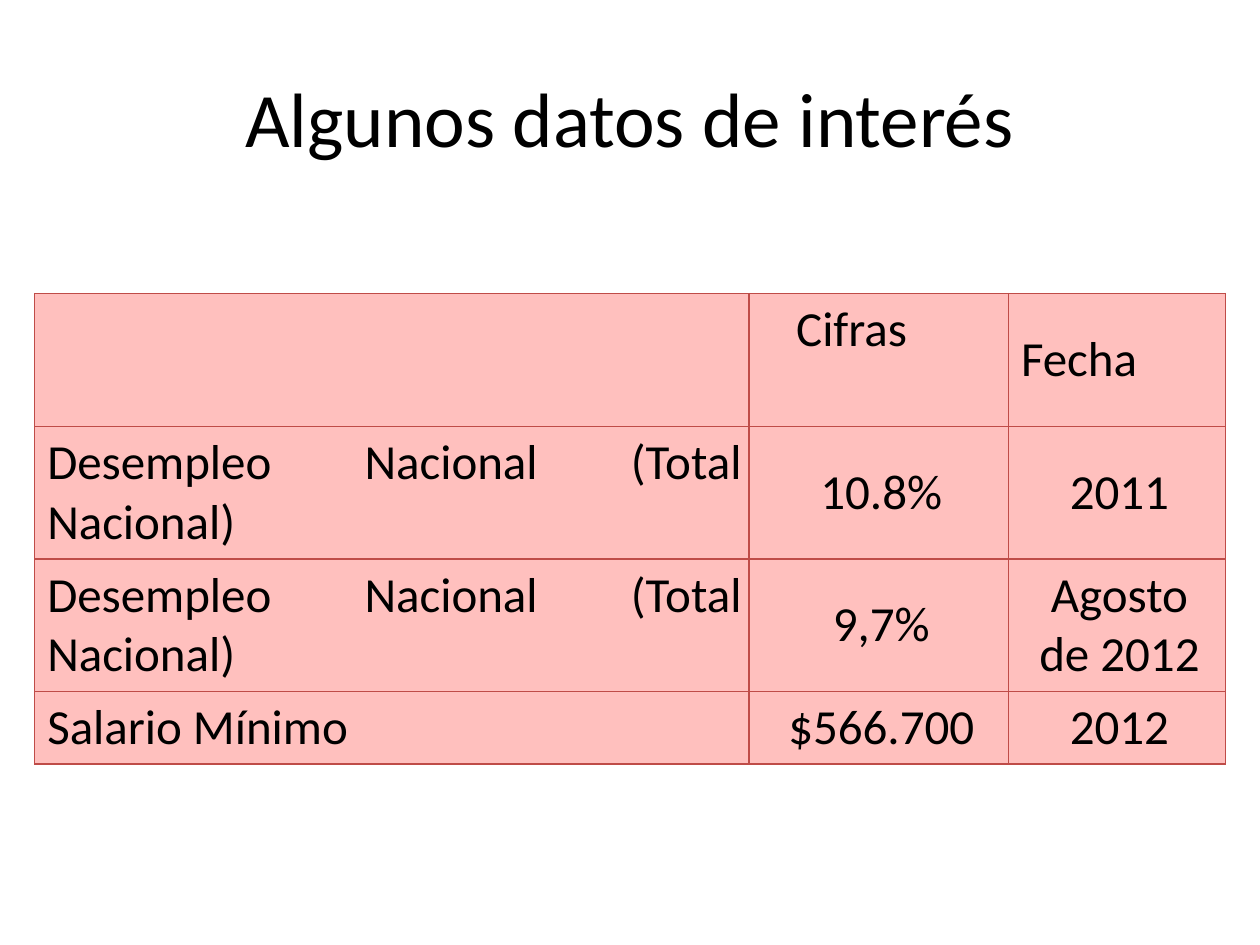
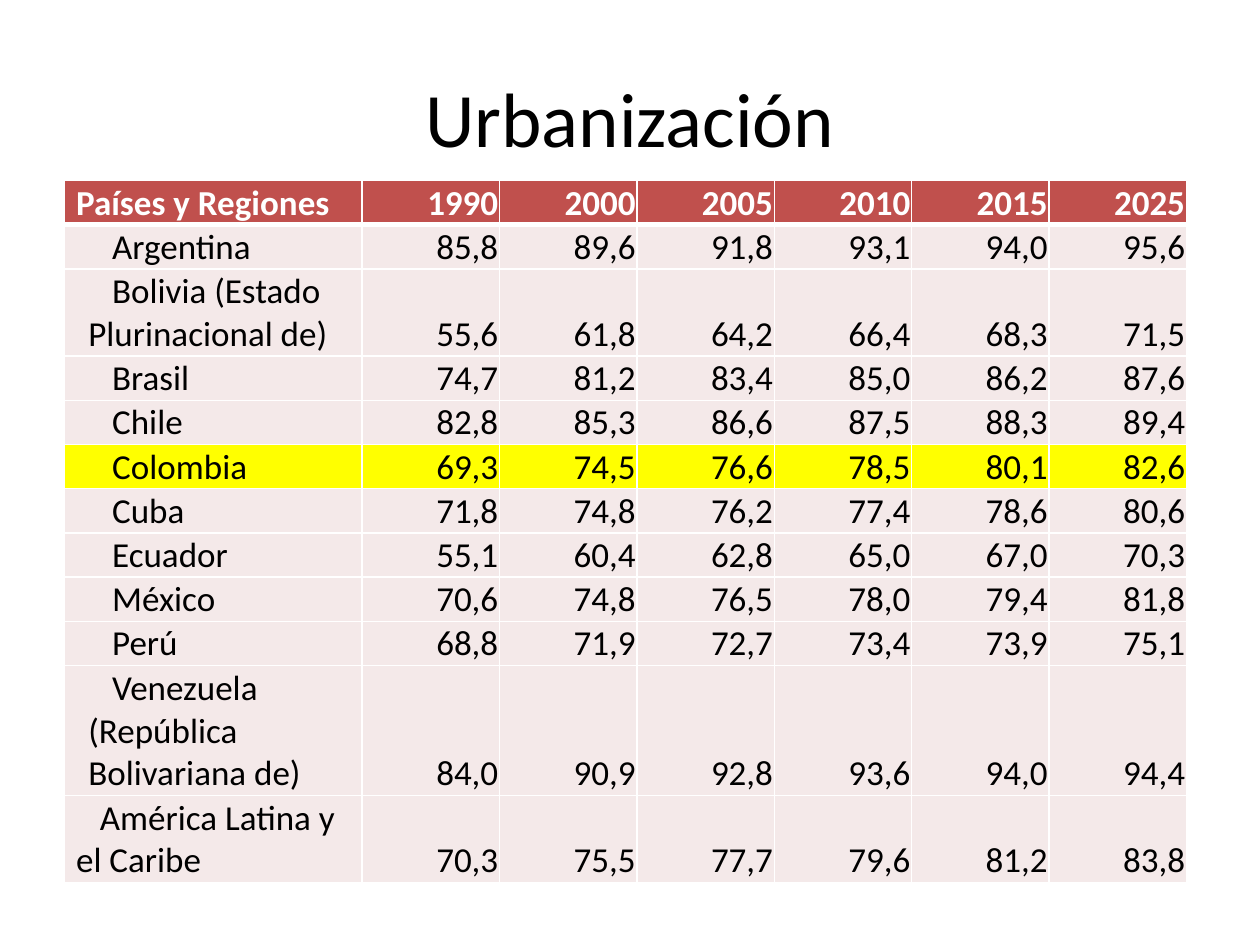
from lxml import etree
from pptx import Presentation
from pptx.dml.color import RGBColor
from pptx.enum import text
from pptx.oxml import ns
from pptx.util import Pt

FONT = "Calibri"
HUES = {"ink": "000000", "white": "FFFFFF", "rose": "FFC0BE", "edge": "BF4C48",
        "head": "C0504D", "pale": "F4E9E9", "mark": "FFFF00"}
LEFT, MID, RIGHT, FULL = (text.PP_ALIGN.LEFT, text.PP_ALIGN.CENTER,
                          text.PP_ALIGN.RIGHT, text.PP_ALIGN.JUSTIFY)
TOP, CORE, BASE = (text.MSO_ANCHOR.TOP, text.MSO_ANCHOR.MIDDLE,
                   text.MSO_ANCHOR.BOTTOM)

FACTS = [
    ("", "Cifras", "Fecha"),
    ("Desempleo Nacional (Total Nacional)", "10.8%", "2011"),
    ("Desempleo Nacional (Total Nacional)", "9,7%", "Agosto de 2012"),
    ("Salario Mínimo", "$566.700", "2012"),
]
YEARS = "1990 2000 2005 2010 2015 2025"
URBAN = [
    ("Países y Regiones", YEARS, 1),
    ("Argentina", "85,8 89,6 91,8 93,1 94,0 95,6", 1),
    ("Bolivia (Estado Plurinacional de)", "55,6 61,8 64,2 66,4 68,3 71,5", 2),
    ("Brasil", "74,7 81,2 83,4 85,0 86,2 87,6", 1),
    ("Chile", "82,8 85,3 86,6 87,5 88,3 89,4", 1),
    ("Colombia", "69,3 74,5 76,6 78,5 80,1 82,6", 1),
    ("Cuba", "71,8 74,8 76,2 77,4 78,6 80,6", 1),
    ("Ecuador", "55,1 60,4 62,8 65,0 67,0 70,3", 1),
    ("México", "70,6 74,8 76,5 78,0 79,4 81,8", 1),
    ("Perú", "68,8 71,9 72,7 73,4 73,9 75,1", 1),
    ("Venezuela (República Bolivariana de)", "84,0 90,9 92,8 93,6 94,0 94,4", 3),
    ("América Latina y el Caribe", "70,3 75,5 77,7 79,6 81,2 83,8", 2),
]


def write(para, words, size, hue="ink", bold=False, align=LEFT):
    para.alignment = align
    run = para.add_run()
    run.text = words
    font = run.font
    font.name, font.size, font.bold = FONT, Pt(size), bold
    font.color.rgb = RGBColor.from_string(HUES[hue])


def start(deck, words, box=(36, 21.6, 648, 90)):
    slide = deck.slides.add_slide(deck.slide_layouts[5])
    title = slide.shapes.title
    title.left, title.top, title.width, title.height = map(Pt, box)
    title.text_frame.vertical_anchor = CORE
    write(title.text_frame.paragraphs[0], words, 44, align=MID)
    return slide


def grid(slide, spot, cols, rows):
    frame = slide.shapes.add_table(len(rows), len(cols), *map(Pt, spot),
                                   Pt(sum(cols)), Pt(sum(rows)))
    table = frame.table
    for col, wide in zip(table.columns, cols):
        col.width = Pt(wide)
    for row, high in zip(table.rows, rows):
        row.height = Pt(high)
    return table


def dress(cell, fill, edge, widths, pads, anchor):
    cell.margin_left, cell.margin_top, cell.margin_right, cell.margin_bottom = map(Pt, pads)
    cell.vertical_anchor = anchor
    props = cell._tc.get_or_add_tcPr()
    for side, wide in zip("LRTB", widths):
        line = etree.SubElement(props, ns.qn(f"a:ln{side}"), w=str(Pt(wide)))
        paint = etree.SubElement(line, ns.qn("a:solidFill"))
        etree.SubElement(paint, ns.qn("a:srgbClr"), val=HUES[edge])
    cell.fill.solid()
    cell.fill.fore_color.rgb = RGBColor.from_string(HUES[fill])


def facts(slide, spot):
    table = grid(slide, spot, (408.2, 148.3, 123.9), (76.2, 75.6, 75.6, 41.4))
    for r, row in enumerate(FACTS):
        for c, words in enumerate(row):
            cell = table.cell(r, c)
            pads = (7.2, 3.6, 4.3, 3.6) if r else (27 if c == 1 else 7.2, 3.6, 7.2, 3.6)
            dress(cell, "rose", "edge", [0.75] * 4, pads, CORE if r else TOP)
            para = cell.text_frame.paragraphs[0]
            if words:
                align = (FULL if c == 0 else MID) if r else LEFT
                write(para, words, 28, align=align)
            if words == "Fecha":
                para.line_spacing = 1.5


def urban(slide, spot):
    table = grid(slide, spot, [170] + [78.5] * 6,
                 [24.4 * lines + 0.75 for *_, lines in URBAN])
    for r, (name, values, _) in enumerate(URBAN):
        head, last = r == 0, r == len(URBAN) - 1
        fill = "head" if head else "mark" if name == "Colombia" else "pale"
        for c, words in enumerate([name] + values.split()):
            cell = table.cell(r, c)
            inset = 0.75 if c else 6.5 if head or last else 13.5
            widths = (1, 1, 3 if r == 1 else 1, 3 if head else 1)
            dress(cell, fill, "white", widths, (inset, 0.75, 0.75, 0), BASE)
            para = cell.text_frame.paragraphs[0]
            write(para, words, 20, "white" if head else "ink", head, RIGHT if c else LEFT)
            if not c and not head:
                para._p.get_or_add_pPr().set("indent", str(Pt(13.6)))


def main():
    deck = Presentation()
    deck.slide_width, deck.slide_height = Pt(720), Pt(540)
    facts(start(deck, "Algunos datos de interés"), (19.8, 167.6))
    urban(start(deck, "Urbanización"), (37, 103.2))
    deck.save("out.pptx")


if __name__ == "__main__":
    main()
